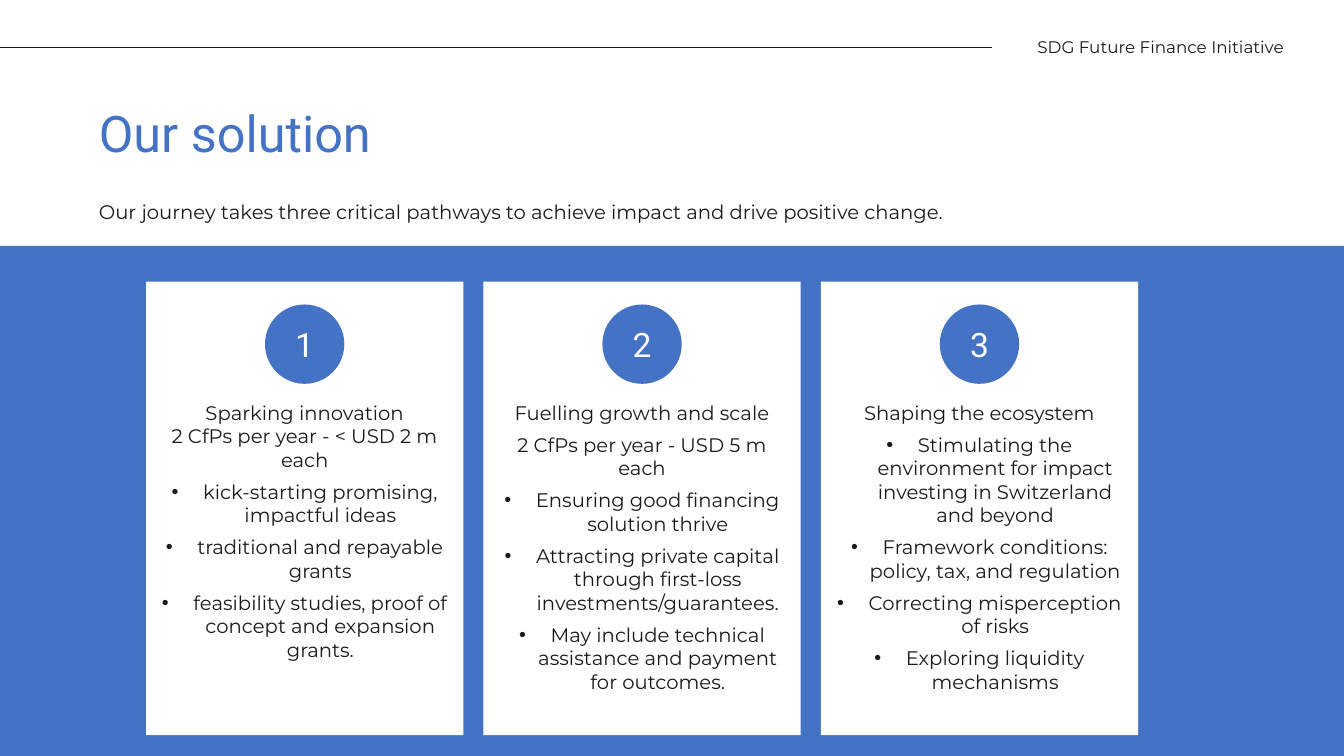
from dataclasses import dataclass

from lxml import etree
from pptx import Presentation
from pptx.dml.color import RGBColor
from pptx.enum.shapes import MSO_CONNECTOR, MSO_SHAPE
from pptx.enum.text import MSO_ANCHOR, MSO_AUTO_SIZE, PP_ALIGN
from pptx.oxml.ns import qn
from pptx.util import Pt

RECT, OVAL = MSO_SHAPE.RECTANGLE, MSO_SHAPE.OVAL
STRAIGHT = MSO_CONNECTOR.STRAIGHT
TOP, MIDDLE = MSO_ANCHOR.TOP, MSO_ANCHOR.MIDDLE
LEFT, CENTER, RIGHT = PP_ALIGN.LEFT, PP_ALIGN.CENTER, PP_ALIGN.RIGHT

HEADER = "SDG Future Finance Initiative"
TITLE = "Our solution"
INTRO = "Our journey takes three critical pathways to achieve impact and drive positive change."
# Each pathway: plain heading paragraphs, then bullets; \v is a line break
PATHWAYS = [
    (["Sparking innovation\v2 CfPs per year - < USD 2 m each"],
     ["kick-starting promising, impactful ideas",
      "traditional and repayable grants",
      "feasibility studies, proof of concept and expansion grants."]),
    (["Fuelling growth and scale", "2 CfPs per year - USD 5 m each"],
     ["Ensuring good financing solution thrive",
      "Attracting private capital through first-loss investments/guarantees.",
      "May include technical assistance and payment for outcomes."]),
    (["Shaping the ecosystem"],
     ["Stimulating the environment for impact investing in Switzerland and beyond",
      "Framework conditions: policy, tax, and regulation",
      "Correcting misperception of risks",
      "Exploring liquidity mechanisms"]),
]


@dataclass(frozen=True)
class Theme:
    blue: RGBColor = RGBColor(0x44, 0x72, 0xC4)
    ink: RGBColor = RGBColor(0x1A, 0x1A, 0x1A)
    white: RGBColor = RGBColor(0xFF, 0xFF, 0xFF)
    heading_font: str = "Roboto"
    body_font: str = "Montserrat"
    title_size: int = 36
    number_size: int = 24
    body_size: int = 14
    header_size: int = 12


THEME = Theme()
SLIDE_W, SLIDE_H = 960, 540
MARGIN = 70.6
BAND_TOP = 175.7
CARD_LEFT, CARD_TOP, CARD_W, CARD_H = 104.3, 201.2, 226.7, 324
CARD_PITCH = 241
CIRCLE, CIRCLE_TOP = 56.7, 217.5
BULLET_INDENT = 22.5


def style(p, font, size, color, align=LEFT):
    p.alignment = align
    for r in p.runs:
        r.font.name, r.font.size, r.font.bold = font, Pt(size), False
        r.font.color.rgb = color


def set_bullet(p, char=None):
    """Give a paragraph a hanging bullet, or none without a character."""
    pPr = p._p.get_or_add_pPr()
    indent = Pt(BULLET_INDENT) if char else 0
    pPr.set("marL", str(indent))
    pPr.set("indent", str(-indent))
    if char:
        font = etree.SubElement(pPr, qn("a:buFont"))
        font.set("typeface", "Arial")
        etree.SubElement(pPr, qn("a:buChar")).set("char", char)
    else:
        etree.SubElement(pPr, qn("a:buNone"))


def set_frame(tf, anchor=TOP, insets=(0, 0, 0, 0)):
    tf.word_wrap = True
    tf.auto_size = MSO_AUTO_SIZE.NONE
    tf.vertical_anchor = anchor
    tf.margin_left, tf.margin_top, tf.margin_right, tf.margin_bottom = map(Pt, insets)


def place(sp, left, top, width, height):
    sp.left, sp.top, sp.width, sp.height = map(Pt, (left, top, width, height))


def add_filled(s, kind, box, color):
    sp = s.shapes.add_shape(kind, *map(Pt, box))
    sp.shadow.inherit = False
    sp.fill.solid()
    sp.fill.fore_color.rgb = color
    sp.line.fill.background()
    return sp


def add_header(s):
    rule = s.shapes.add_connector(STRAIGHT, 0, Pt(34), Pt(708.5), Pt(34))
    rule.line.color.rgb = THEME.ink
    rule.line.width = Pt(0.5)
    etree.SubElement(rule._element.spPr, qn("a:effectLst"))
    sp = s.shapes.add_textbox(Pt(718.5), Pt(28.1), Pt(198.7), Pt(42.5))
    set_frame(sp.text_frame)
    p = sp.text_frame.paragraphs[0]
    p.text = HEADER
    p.line_spacing = 0.9
    style(p, THEME.body_font, THEME.header_size, THEME.ink, RIGHT)


def fill_placeholders(s):
    title, intro = s.shapes.title, s.placeholders[1]
    place(title, MARGIN, 77.8, 672.5, 42.5)
    place(intro, MARGIN, 134.6, 765.4, 29.5)
    for sp, text, spacing in ((title, TITLE, 0.9), (intro, INTRO, 1.5)):
        set_frame(sp.text_frame)
        p = sp.text_frame.paragraphs[0]
        p.text = text
        p.line_spacing = spacing
        p.space_before = Pt(0)
        set_bullet(p)
    style(title.text_frame.paragraphs[0], THEME.heading_font, THEME.title_size, THEME.blue)
    style(intro.text_frame.paragraphs[0], THEME.body_font, THEME.body_size, THEME.ink)


def add_pathway(s, number, headings, bullets):
    left = CARD_LEFT + (number - 1) * CARD_PITCH
    card = add_filled(s, RECT, (left, CARD_TOP, CARD_W, CARD_H), THEME.white)
    tf = card.text_frame
    set_frame(tf, TOP, (8.5, 85, 8.5, 3.6))
    for i, text in enumerate(headings + bullets):
        p = tf.add_paragraph() if i else tf.paragraphs[0]
        p.text = text
        p.space_after = Pt(6)
        if i >= len(headings):
            set_bullet(p, "•")
        style(p, THEME.body_font, THEME.body_size, THEME.ink, CENTER)

    circle_left = left + (CARD_W - CIRCLE) / 2
    circle = add_filled(s, OVAL, (circle_left, CIRCLE_TOP, CIRCLE, CIRCLE), THEME.blue)
    set_frame(circle.text_frame, MIDDLE)
    p = circle.text_frame.paragraphs[0]
    p.text = str(number)
    style(p, THEME.heading_font, THEME.number_size, THEME.white, CENTER)


def main():
    prs = Presentation()
    prs.slide_width, prs.slide_height = Pt(SLIDE_W), Pt(SLIDE_H)
    s = prs.slides.add_slide(prs.slide_layouts[1])
    add_header(s)
    fill_placeholders(s)
    add_filled(s, RECT, (0, BAND_TOP, SLIDE_W, SLIDE_H - BAND_TOP), THEME.blue)
    for number, (headings, bullets) in enumerate(PATHWAYS, 1):
        add_pathway(s, number, headings, bullets)
    prs.save("out.pptx")


if __name__ == "__main__":
    main()
